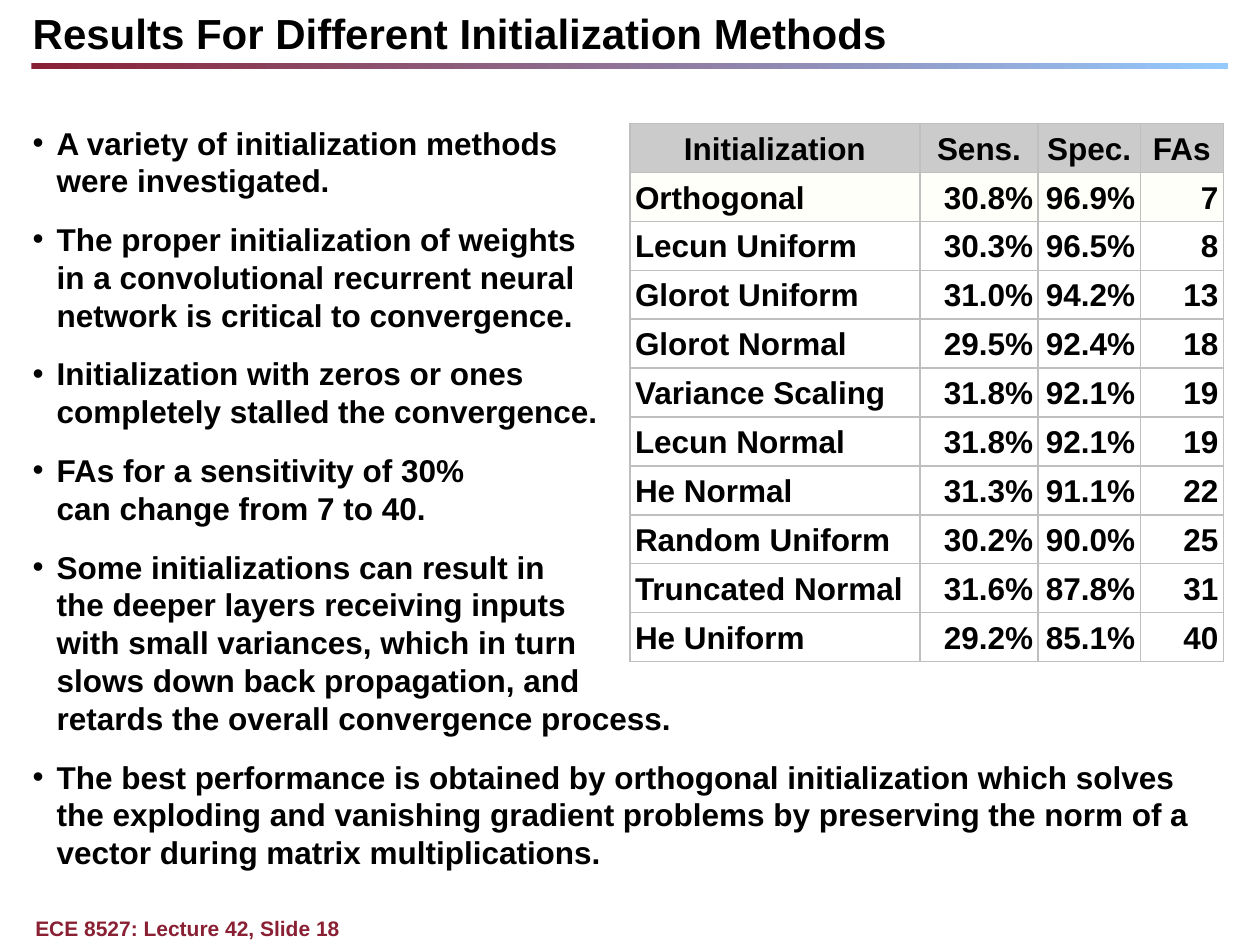
from lxml import etree
from pptx import Presentation
from pptx.dml.color import RGBColor
from pptx.enum.shapes import MSO_SHAPE
from pptx.enum.text import MSO_ANCHOR, PP_ALIGN
from pptx.oxml.ns import qn
from pptx.util import Inches, Pt

RECT = MSO_SHAPE.RECTANGLE
TOP, MID = MSO_ANCHOR.TOP, MSO_ANCHOR.MIDDLE
LEFT, MIDDLE = PP_ALIGN.LEFT, PP_ALIGN.CENTER
RIGHT, FULL = PP_ALIGN.RIGHT, PP_ALIGN.JUSTIFY

WIDE, HIGH = Inches(10), Inches(7.5)
FONT = "Arial"
BLACK, WINE, SKY = "000000", "892034", "95CAFF"
GREY, CREAM, EDGE = "CBCBCB", "FFFFF9", "BFBFBF"

TITLE = "Results For Different Initialization Methods"
FOOT = "ECE 8527: Lecture 42, Slide 18"
POINTS = [
    ["A variety of initialization methods", "were investigated."],
    ["The proper initialization of weights",
     "in a convolutional recurrent neural",
     "network is critical to convergence."],
    ["Initialization with zeros or ones",
     "completely stalled the convergence."],
    ["FAs for a sensitivity of 30%", "can change from 7 to 40."],
    ["Some initializations can result in",
     "the deeper layers receiving inputs",
     "with small variances, which in turn",
     "slows down back propagation, and",
     "retards the overall convergence process."],
    ["The best performance is obtained by orthogonal initialization "
     "which solves the exploding and vanishing gradient problems by "
     "preserving the norm of a vector during matrix multiplications."],
]
HEADS = ["Initialization", "Sens.", "Spec.", "FAs"]
SCORES = [
    ["Orthogonal", "30.8%", "96.9%", "7"],
    ["Lecun Uniform", "30.3%", "96.5%", "8"],
    ["Glorot Uniform", "31.0%", "94.2%", "13"],
    ["Glorot Normal", "29.5%", "92.4%", "18"],
    ["Variance Scaling", "31.8%", "92.1%", "19"],
    ["Lecun Normal", "31.8%", "92.1%", "19"],
    ["He Normal", "31.3%", "91.1%", "22"],
    ["Random Uniform", "30.2%", "90.0%", "25"],
    ["Truncated Normal", "31.6%", "87.8%", "31"],
    ["He Uniform", "29.2%", "85.1%", "40"],
]
COLS = [23, 9.4, 8.1, 6.6]
ROW = 5.18


def color(code):
    return RGBColor.from_string(code)


def across(share):
    return int(WIDE * share / 100)


def down(share):
    return int(HIGH * share / 100)


def place(x, y, w, h):
    return across(x), down(y), across(w), down(h)


def add_run(para, text, size=18, code=BLACK):
    run = para.add_run()
    run.text = text
    font = run.font
    font.name, font.size, font.bold = FONT, Pt(size), True
    font.color.rgb = color(code)


def add_box(slide, spot, anchor=TOP):
    frame = slide.shapes.add_textbox(*place(*spot)).text_frame
    frame.word_wrap = True
    frame.vertical_anchor = anchor
    frame.margin_left = frame.margin_right = 0
    frame.margin_top = frame.margin_bottom = 0
    return frame


def indent(para, left, first=0):
    props = para._p.get_or_add_pPr()
    props.set("marL", str(across(left)))
    props.set("indent", str(across(first)))
    return props


def add_title(slide):
    para = add_box(slide, (0, 0, 100, 6.93), MID).paragraphs[0]
    indent(para, 2.6)
    add_run(para, TITLE, 24)


def add_foot(slide):
    para = add_box(slide, (2.8, 96.93, 89.2, 2.67)).paragraphs[0]
    add_run(para, FOOT, 12, WINE)


def add_bar(slide):
    bar = slide.shapes.add_shape(RECT, *place(2.5, 6.67, 95, 0.67))
    bar.shadow.inherit = False
    bar.line.fill.background()
    bar.fill.gradient()
    bar.fill.gradient_angle = 0
    for stop, code in zip(bar.fill.gradient_stops, (WINE, SKY)):
        stop.color.rgb = color(code)


def add_points(slide):
    frame = add_box(slide, (2.5, 13.07, 95, 81.33))
    for i, lines in enumerate(POINTS):
        para = frame.add_paragraph() if i else frame.paragraphs[0]
        props = indent(para, 2, -1.9)
        etree.SubElement(props, qn("a:buFont"), typeface=FONT)
        etree.SubElement(props, qn("a:buChar"), char="•")
        para.space_after = Pt(12)
        for j, line in enumerate(lines):
            if j:
                para.add_line_break()
            add_run(para, line)


def add_edges(cell):
    props = cell._tc.get_or_add_tcPr()
    for side in ("lnL", "lnR", "lnT", "lnB"):
        line = etree.SubElement(props, qn("a:" + side), w=str(Pt(1)))
        fill = etree.SubElement(line, qn("a:solidFill"))
        etree.SubElement(fill, qn("a:srgbClr"), val=EDGE)


def fill_cell(cell, text, align, code):
    add_edges(cell)
    if code:
        cell.fill.solid()
        cell.fill.fore_color.rgb = color(code)
    else:
        cell.fill.background()
    cell.vertical_anchor = MID
    cell.margin_left = cell.margin_right = across(0.4)
    cell.margin_top = cell.margin_bottom = 0
    para = cell.text_frame.paragraphs[0]
    para.alignment = align
    para.line_spacing = 1.07
    add_run(para, text)


def add_scores(slide):
    rows = [HEADS] + SCORES
    spot = place(50, 13.07, sum(COLS), ROW * len(rows))
    table = slide.shapes.add_table(len(rows), len(COLS), *spot).table
    table.first_row = table.horz_banding = False
    for col, share in zip(table.columns, COLS):
        col.width = across(share)
    fills = {0: GREY, 1: CREAM}
    for r, row in enumerate(rows):
        table.rows[r].height = down(ROW)
        for c, text in enumerate(row):
            align = MIDDLE if r == 0 else RIGHT if c else FULL
            fill_cell(table.cell(r, c), text, align, fills.get(r))


def main():
    deck = Presentation()
    deck.slide_width, deck.slide_height = WIDE, HIGH
    slide = deck.slides.add_slide(deck.slide_layouts[6])
    add_bar(slide)
    add_foot(slide)
    add_points(slide)
    add_title(slide)
    add_scores(slide)
    deck.save("out.pptx")


if __name__ == "__main__":
    main()
